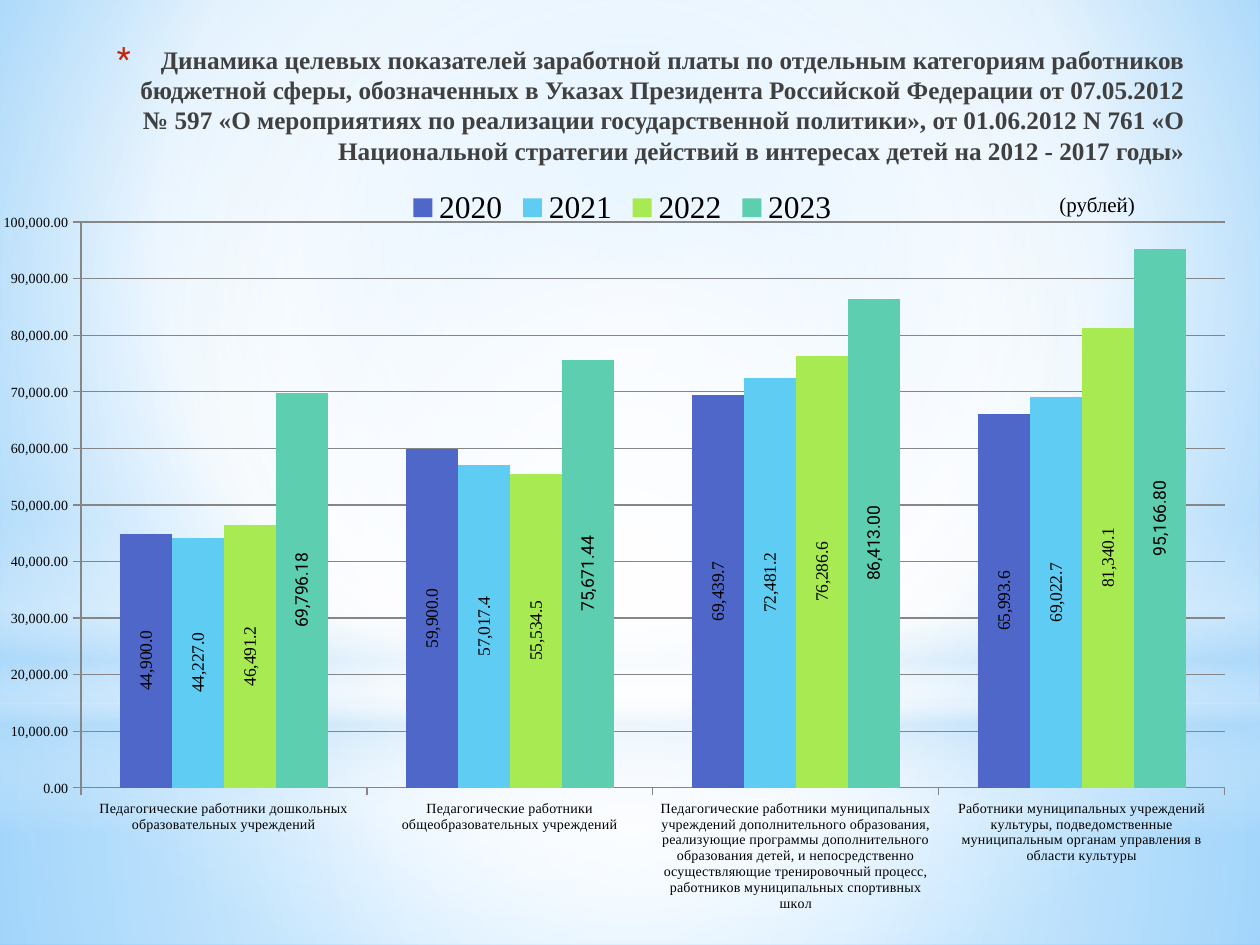
from lxml import etree
from pptx import Presentation
from pptx.chart.data import CategoryChartData
from pptx.dml.color import RGBColor
from pptx.enum import chart as charts, shapes, text
from pptx.oxml import parse_xml
from pptx.oxml.ns import nsdecls, qn
from pptx.util import Inches, Pt

SERIF, SANS = "Times New Roman", "Roboto"
COLORS = {"title": "404040", "bullet": "C3260C", "text": "000000", "grid": "868686",
          "white": "FFFFFF", "haze": "B4DCFA", "sky": "9ED5FF", "edge": "5BB9FF"}
TITLE = ("Динамика целевых показателей заработной платы по отдельным категориям работников "
         "бюджетной сферы, обозначенных в Указах Президента Российской Федерации от 07.05.2012 "
         "№ 597 «О мероприятиях по реализации государственной политики», от 01.06.2012 N 761 «О "
         "Национальной стратегии действий в интересах детей на 2012 - 2017 годы»")
UNIT = "(рублей)"
CATEGORIES = [
    "Педагогические работники дошкольных образовательных учреждений",
    "Педагогические работники общеобразовательных учреждений",
    "Педагогические работники муниципальных учреждений дополнительного образования, "
    "реализующие программы дополнительного образования детей, и непосредственно "
    "осуществляющие тренировочный процесс, работников муниципальных спортивных школ",
    "Работники муниципальных учреждений культуры, подведомственные муниципальным органам "
    "управления в области культуры",
]
SERIES = [
    ("2020", (44900, 59900, 69439.7, 65993.6), "4E67C8", "#,##0.0", SERIF),
    ("2021", (44227, 57017.4, 72481.2, 69022.7), "5ECCF3", "#,##0.0", SERIF),
    ("2022", (46491.2, 55534.5, 76286.6, 81340.1), "A7EA52", "#,##0.0", SERIF),
    ("2023", (69796.18, 75671.44, 86413, 95166.8), "5DCEAF", "#,##0.00", SANS),
]
PLOT = {"x": 0.065, "y": 0.061, "w": 0.919, "h": 0.735}
CENTER = (50, 50, 50, 50)
BACKGROUND = [(0, "sky", 100), (60, "white", 100), (100, "edge", 100)]
RECTANGLE, OVAL = shapes.MSO_SHAPE.RECTANGLE, shapes.MSO_SHAPE.OVAL
LAYERS = [
    (RECTANGLE, 5.58, 1.92, [(0, "white", 91), (37, "white", 76), (100, "haze", 79)], CENTER),
    (RECTANGLE, 0, 5.58, [(0, "white", 89), (48, "white", 62), (100, "haze", 79)], CENTER),
    (RECTANGLE, 4.12, 2.5, [(0, "white", 0), (29, "white", 30), (45, "haze", 40),
                            (55, "white", 26), (65, "haze", 60), (100, "white", 0)], None),
    (OVAL, 1.75, 5.58, [(0, "white", 100), (56, "white", 0)], CENTER),
]


def rgb(name):
    return RGBColor.from_string(COLORS.get(name, name))


def set_gradient(properties, stops, focus):
    stop_xml = "".join(
        f'<a:gs pos="{position * 1000}"><a:srgbClr val="{COLORS[color]}">'
        f'<a:alpha val="{alpha * 1000}"/></a:srgbClr></a:gs>'
        for position, color, alpha in stops)
    if focus:
        sides = " ".join(f'{side}="{value * 1000}"' for side, value in zip("ltrb", focus))
        direction = f'<a:path path="circle"><a:fillToRect {sides}/></a:path>'
    else:
        direction = '<a:lin ang="5400000" scaled="0"/>'
    gradient = parse_xml(f'<a:gradFill {nsdecls("a")} rotWithShape="1">'
                         f'<a:gsLst>{stop_xml}</a:gsLst>{direction}</a:gradFill>')
    solid = properties.find(qn("a:solidFill"))
    properties.replace(solid, gradient)


def set_font(font, size, name=SERIF, color="text", bold=False):
    font.size, font.name, font.bold = Pt(size), name, bold
    font.color.rgb = rgb(color)


def add_backdrop(slide):
    slide.background.fill.solid()
    set_gradient(slide.element.find(".//" + qn("p:bgPr")), BACKGROUND, (20, 10, 20, 60))
    for kind, top, height, stops, focus in LAYERS:
        shape = slide.shapes.add_shape(kind, 0, Inches(top), Inches(10), Inches(height))
        shape.shadow.inherit = False
        shape.line.fill.background()
        shape.fill.solid()
        set_gradient(shape.element.spPr, stops, focus)


def add_title(slide):
    title = slide.shapes.title
    slide.shapes.element.append(title.element)
    title.left, title.top = Inches(0.5), Inches(0.3)
    title.width, title.height = Inches(9), Inches(0.85)
    frame = title.text_frame
    frame.text = TITLE
    frame.word_wrap = True
    frame.auto_size = text.MSO_AUTO_SIZE.NONE
    frame.vertical_anchor = text.MSO_ANCHOR.TOP
    paragraph = frame.paragraphs[0]
    paragraph.alignment = text.PP_ALIGN.RIGHT
    set_font(paragraph.runs[0].font, 14.4, color="title", bold=True)
    properties = paragraph._p.get_or_add_pPr()
    properties.set("marL", str(Inches(0.35)))
    properties.set("indent", str(Inches(-0.35)))
    color = etree.SubElement(properties, qn("a:buClr"))
    etree.SubElement(color, qn("a:srgbClr"), val=COLORS["bullet"])
    etree.SubElement(properties, qn("a:buSzPct"), val="128000")
    etree.SubElement(properties, qn("a:buFont"), typeface=SANS)
    etree.SubElement(properties, qn("a:buChar"), char="*")


def format_axis(axis):
    axis.major_tick_mark = charts.XL_TICK_MARK.OUTSIDE
    axis.minor_tick_mark = charts.XL_TICK_MARK.NONE
    set_font(axis.tick_labels.font, 8)
    axis.format.line.color.rgb = rgb("grid")


def add_salary_chart(slide):
    data = CategoryChartData(number_format="#,##0.00")
    data.categories = CATEGORIES
    for name, values, *_ in SERIES:
        data.add_series(name, values)
    chart = slide.shapes.add_chart(charts.XL_CHART_TYPE.COLUMN_CLUSTERED, 0, Inches(1.39),
                                   Inches(9.88), Inches(6.11), data).chart
    set_font(chart.font, 18, SANS)
    chart.has_title = False
    chart.has_legend = True
    chart.legend.position = charts.XL_LEGEND_POSITION.TOP
    chart.legend.include_in_layout = False
    set_font(chart.legend.font, 18)

    format_axis(chart.category_axis)
    value_axis = chart.value_axis
    format_axis(value_axis)
    value_axis.minimum_scale, value_axis.maximum_scale = 0, 100000
    value_axis.major_unit = 10000
    value_axis.tick_labels.number_format = "#,##0.00"
    value_axis.tick_labels.number_format_is_linked = False
    value_axis.has_major_gridlines = True
    value_axis.major_gridlines.format.line.color.rgb = rgb("grid")

    plot = chart.plots[0]
    plot.gap_width, plot.overlap, plot.vary_by_categories = 150, 0, False
    for series, (_, _, color, number_format, font_name) in zip(plot.series, SERIES):
        series.format.fill.solid()
        series.format.fill.fore_color.rgb = rgb(color)
        labels = series.data_labels
        labels.show_value = True
        labels.number_format, labels.number_format_is_linked = number_format, False
        labels.position = charts.XL_LABEL_POSITION.CENTER
        set_font(labels.font, 10, font_name)
        body = labels._element.find(".//" + qn("a:bodyPr"))
        body.set("rot", "-5400000")
        body.set("vert", "horz")

    area = chart._chartSpace.find(".//" + qn("c:plotArea"))
    for old in area.findall(qn("c:layout")):
        area.remove(old)
    sizes = "".join(f'<c:{key} val="{value}"/>' for key, value in PLOT.items())
    area.insert(0, parse_xml(
        f'<c:layout {nsdecls("c")}><c:manualLayout><c:layoutTarget val="inner"/>'
        f'<c:xMode val="edge"/><c:yMode val="edge"/>{sizes}</c:manualLayout></c:layout>'))


def add_unit(slide):
    box = slide.shapes.add_textbox(Inches(8.31), Inches(1.47), Inches(1.57), Inches(0.3))
    box.text_frame.word_wrap = True
    box.text_frame.text = UNIT
    set_font(box.text_frame.paragraphs[0].runs[0].font, 12)


def main():
    presentation = Presentation()
    presentation.slide_width, presentation.slide_height = Inches(10), Inches(7.5)
    slide = presentation.slides.add_slide(presentation.slide_layouts[5])
    add_backdrop(slide)
    add_title(slide)
    add_salary_chart(slide)
    add_unit(slide)
    presentation.save("out.pptx")


if __name__ == "__main__":
    main()
